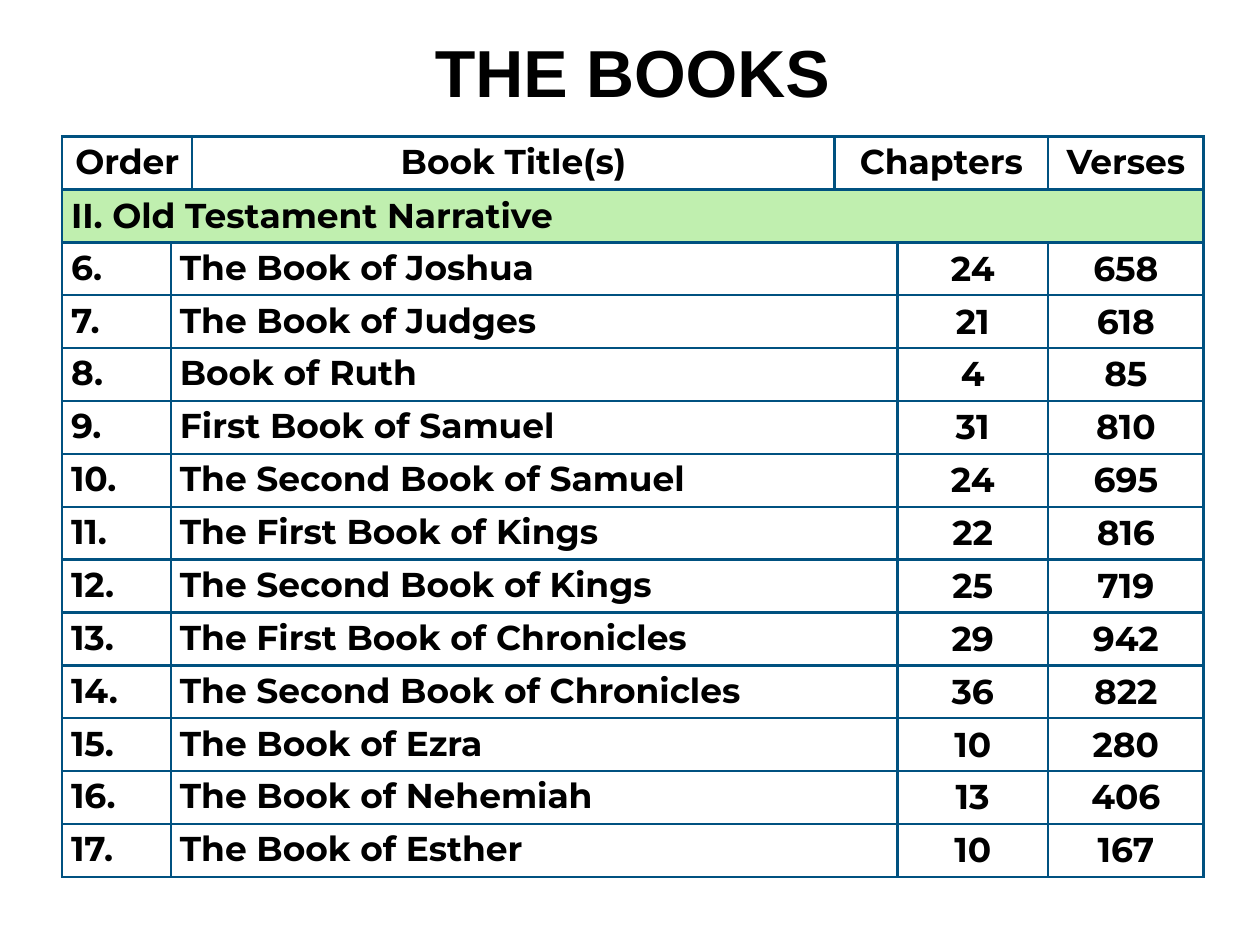
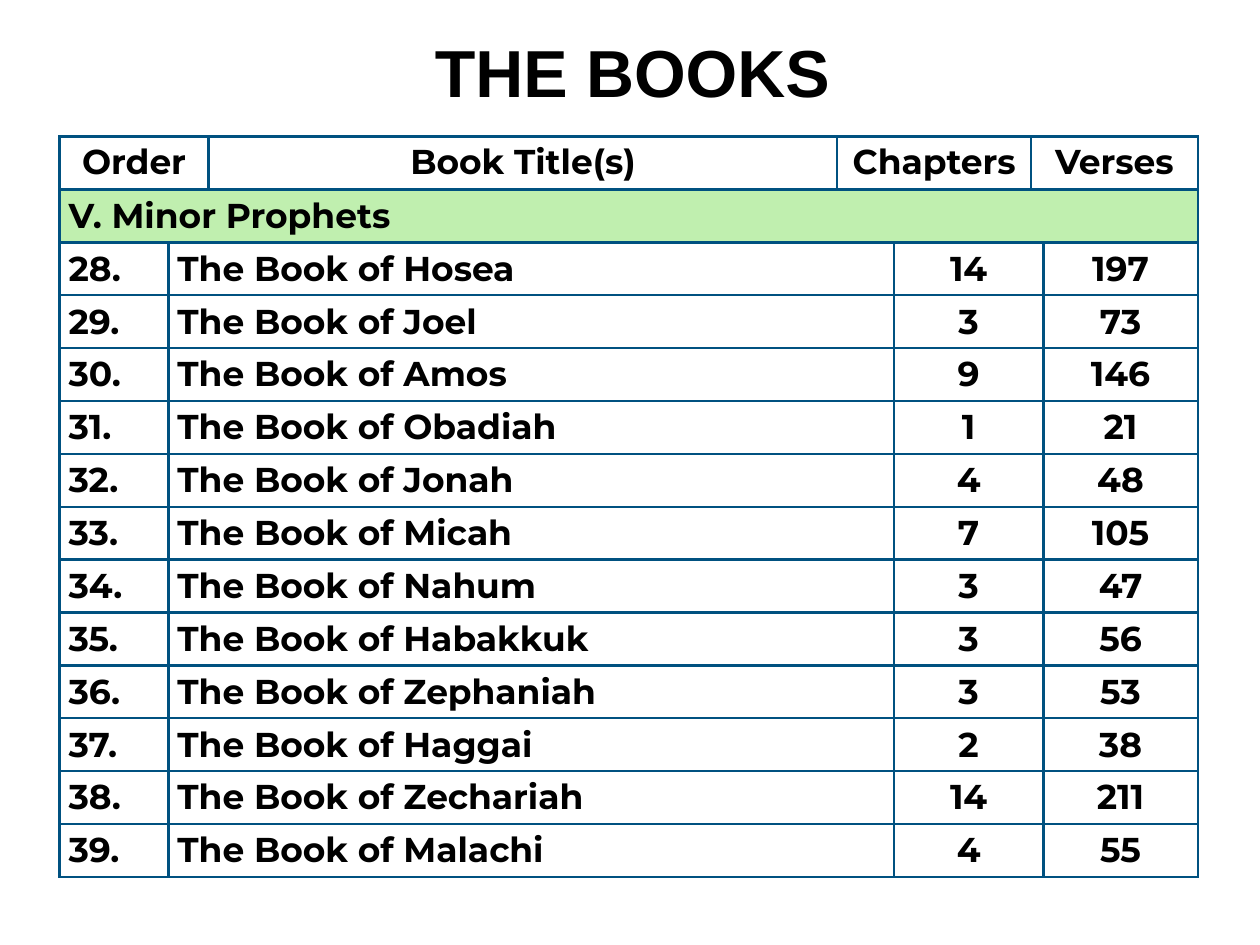
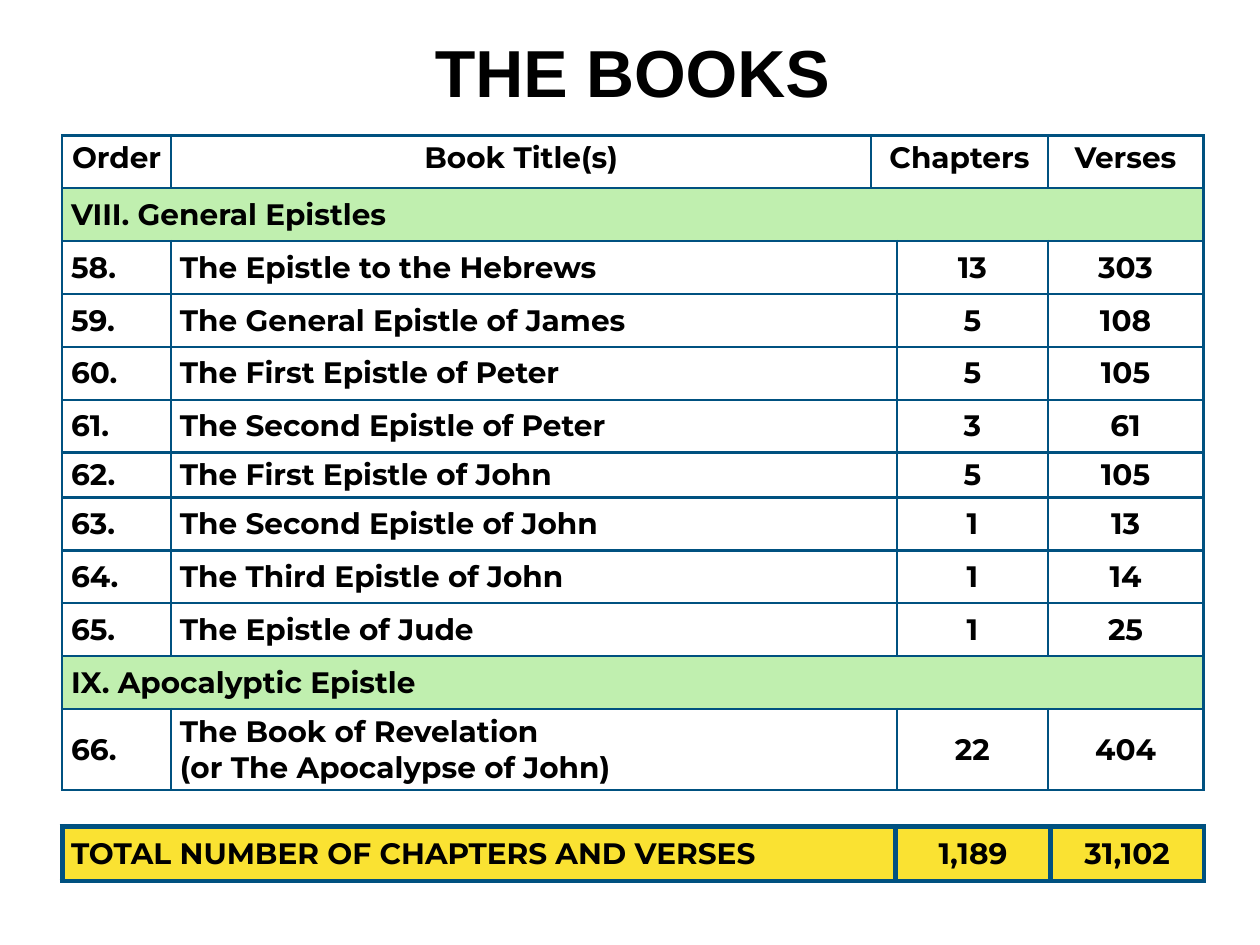
from dataclasses import dataclass

from lxml import etree
from pptx import Presentation
from pptx.dml.color import RGBColor
from pptx.enum.text import MSO_ANCHOR, PP_ALIGN
from pptx.oxml.ns import qn
from pptx.slide import Slide
from pptx.table import _Cell
from pptx.util import Pt

LEFT, CENTER = PP_ALIGN.LEFT, PP_ALIGN.CENTER
TOP, MIDDLE = MSO_ANCHOR.TOP, MSO_ANCHOR.MIDDLE


@dataclass(frozen=True)
class Theme:
    text: str = "000000"
    background: str = "FFFFFF"
    section: str = "C0EFAF"
    total: str = "FAE232"
    border: str = "005180"
    title_font: str = "Arial"
    table_font: str = "Montserrat"
    title_size: float = 54
    large_size: float = 28
    small_size: float = 24
    thin_border: float = 2.25
    thick_border: float = 4.5
    row_height: float = 43


THEME = Theme()


@dataclass(frozen=True)
class Book:
    title: str
    chapters: str
    verses: str
    height: float = THEME.row_height


@dataclass(frozen=True)
class Section:
    title: str
    first_order: int
    books: tuple[Book, ...]


@dataclass(frozen=True)
class Grid:
    """Place and columns of a table; spans count the columns under each cell."""
    left: float
    top: float
    columns: tuple[float, ...]
    size: float
    border: float = THEME.thin_border
    header_spans: tuple[int, ...] = ()
    book_spans: tuple[int, ...] = ()
    book_anchor: MSO_ANCHOR = MIDDLE


@dataclass(frozen=True)
class CellContent:
    text: str
    span: int = 1
    align: PP_ALIGN = CENTER
    anchor: MSO_ANCHOR = MIDDLE
    fill: str = THEME.background


@dataclass(frozen=True)
class Row:
    cells: tuple[CellContent, ...]
    height: float = THEME.row_height


@dataclass(frozen=True)
class BookSlide:
    grid: Grid
    sections: tuple[Section, ...]


HEADINGS = ("Order", "Book Title(s)", "Chapters", "Verses")

BOOK_SLIDES = (
    BookSlide(
        Grid(50.5, 111, (88.5, 16.5, 522, 51, 122.5, 126.5), THEME.large_size,
             header_spans=(2, 1, 2, 1), book_spans=(1, 3, 1, 1), book_anchor=TOP),
        (Section("II. Old Testament Narrative", 6, (
            Book("The Book of Joshua", "24", "658"),
            Book("The Book of Judges", "21", "618"),
            Book("Book of Ruth", "4", "85"),
            Book("First Book of Samuel", "31", "810"),
            Book("The Second Book of Samuel", "24", "695"),
            Book("The First Book of Kings", "22", "816"),
            Book("The Second Book of Kings", "25", "719"),
            Book("The First Book of Chronicles", "29", "942"),
            Book("The Second Book of Chronicles", "36", "822"),
            Book("The Book of Ezra", "10", "280"),
            Book("The Book of Nehemiah", "13", "406"),
            Book("The Book of Esther", "10", "167"),
        )),),
    ),
    BookSlide(
        Grid(48.5, 111, (88.5, 32.5, 511, 46, 111.5, 10, 125.5), THEME.large_size,
             header_spans=(2, 1, 2, 2), book_spans=(1, 3, 2, 1)),
        (Section("V. Minor Prophets", 28, (
            Book("The Book of Hosea", "14", "197"),
            Book("The Book of Joel", "3", "73"),
            Book("The Book of Amos", "9", "146"),
            Book("The Book of Obadiah", "1", "21"),
            Book("The Book of Jonah", "4", "48"),
            Book("The Book of Micah", "7", "105"),
            Book("The Book of Nahum", "3", "47"),
            Book("The Book of Habakkuk", "3", "56"),
            Book("The Book of Zephaniah", "3", "53"),
            Book("The Book of Haggai", "2", "38"),
            Book("The Book of Zechariah", "14", "211"),
            Book("The Book of Malachi", "4", "55"),
        )),),
    ),
    BookSlide(
        Grid(50.5, 110, (88.5, 569, 21, 122.5, 126.5), THEME.small_size,
             header_spans=(1, 1, 2, 1), book_spans=(1, 2, 1, 1)),
        (Section("VIII. General Epistles", 58, (
            Book("The Epistle to the Hebrews", "13", "303"),
            Book("The General Epistle of James", "5", "108"),
            Book("The First Epistle of Peter", "5", "105"),
            Book("The Second Epistle of Peter", "3", "61"),
            Book("The First Epistle of John", "5", "105", height=36.5),
            Book("The Second Epistle of John", "1", "13"),
            Book("The Third Epistle of John", "1", "14"),
            Book("The Epistle of Jude", "1", "25"),
        )), Section("IX. Apocalyptic Epistle", 66, (
            Book("The Book of Revelation\v(or The Apocalypse of John)", "22", "404",
                 height=65.75),
        ))),
    ),
)

TOTAL_GRID = Grid(50.5, 672, (677.5, 125.5, 125), THEME.small_size, THEME.thick_border)
TOTAL_ROW = Row((
    CellContent("TOTAL NUMBER OF CHAPTERS AND VERSES", align=LEFT, fill=THEME.total),
    CellContent("1,189", fill=THEME.total),
    CellContent("31,102", fill=THEME.total),
), height=44)


def format_text(text_frame, font_name: str, size: float, align: PP_ALIGN) -> None:
    for paragraph in text_frame.paragraphs:
        paragraph.alignment = align
        for run in paragraph.runs:
            run.font.name = font_name
            run.font.size = Pt(size)
            run.font.bold = True
            run.font.color.rgb = RGBColor.from_string(THEME.text)


def add_title(slide: Slide, text: str) -> None:
    shape = slide.shapes.add_textbox(Pt(77), Pt(-27), Pt(874), Pt(170))
    text_frame = shape.text_frame
    text_frame.word_wrap = True
    text_frame.vertical_anchor = MIDDLE
    text_frame.text = text
    format_text(text_frame, THEME.title_font, THEME.title_size, CENTER)


def set_borders(cell: _Cell, width: float) -> None:
    properties = cell._tc.get_or_add_tcPr()
    for side in ("a:lnL", "a:lnR", "a:lnT", "a:lnB"):
        line = etree.SubElement(properties, qn(side), w=str(int(Pt(width))))
        fill = etree.SubElement(line, qn("a:solidFill"))
        etree.SubElement(fill, qn("a:srgbClr"), val=THEME.border)


def fill_cell(cell: _Cell, content: CellContent, size: float) -> None:
    cell.fill.solid()
    cell.fill.fore_color.rgb = RGBColor.from_string(content.fill)
    cell.vertical_anchor = content.anchor
    cell.text_frame.text = content.text
    format_text(cell.text_frame, THEME.table_font, size, content.align)


def add_grid(slide: Slide, grid: Grid, rows: list[Row]) -> None:
    table = slide.shapes.add_table(
        len(rows), len(grid.columns), Pt(grid.left), Pt(grid.top),
        Pt(sum(grid.columns)), Pt(sum(row.height for row in rows))).table
    table.first_row = table.horz_banding = False
    for column, width in zip(table.columns, grid.columns):
        column.width = Pt(width)
    for cell in table.iter_cells():
        set_borders(cell, grid.border)
    for row_index, row in enumerate(rows):
        table.rows[row_index].height = Pt(row.height)
        column_index = 0
        for content in row.cells:
            cell = table.cell(row_index, column_index)
            column_index += content.span
            if content.span > 1:
                cell.merge(table.cell(row_index, column_index - 1))
            fill_cell(cell, content, grid.size)


def book_row(grid: Grid, order: int, book: Book) -> Row:
    order_span, title_span, chapters_span, verses_span = grid.book_spans
    return Row((
        CellContent(f"{order}.", order_span, LEFT, grid.book_anchor),
        CellContent(book.title, title_span, LEFT, grid.book_anchor),
        CellContent(book.chapters, chapters_span),
        CellContent(book.verses, verses_span),
    ), book.height)


def book_table_rows(book_slide: BookSlide) -> list[Row]:
    grid = book_slide.grid
    rows = [Row(tuple(CellContent(heading, span, anchor=TOP)
                      for heading, span in zip(HEADINGS, grid.header_spans)))]
    for section in book_slide.sections:
        rows.append(Row((CellContent(section.title, len(grid.columns), LEFT,
                                     fill=THEME.section),)))
        rows += [book_row(grid, order, book)
                 for order, book in enumerate(section.books, section.first_order)]
    return rows


def main() -> None:
    presentation = Presentation()
    presentation.slide_width, presentation.slide_height = Pt(1024), Pt(768)
    blank_layout = presentation.slide_layouts[6]
    for book_slide in BOOK_SLIDES:
        slide = presentation.slides.add_slide(blank_layout)
        add_title(slide, "THE BOOKS")
        add_grid(slide, book_slide.grid, book_table_rows(book_slide))
    add_grid(slide, TOTAL_GRID, [TOTAL_ROW])
    presentation.save("out.pptx")


if __name__ == "__main__":
    main()
